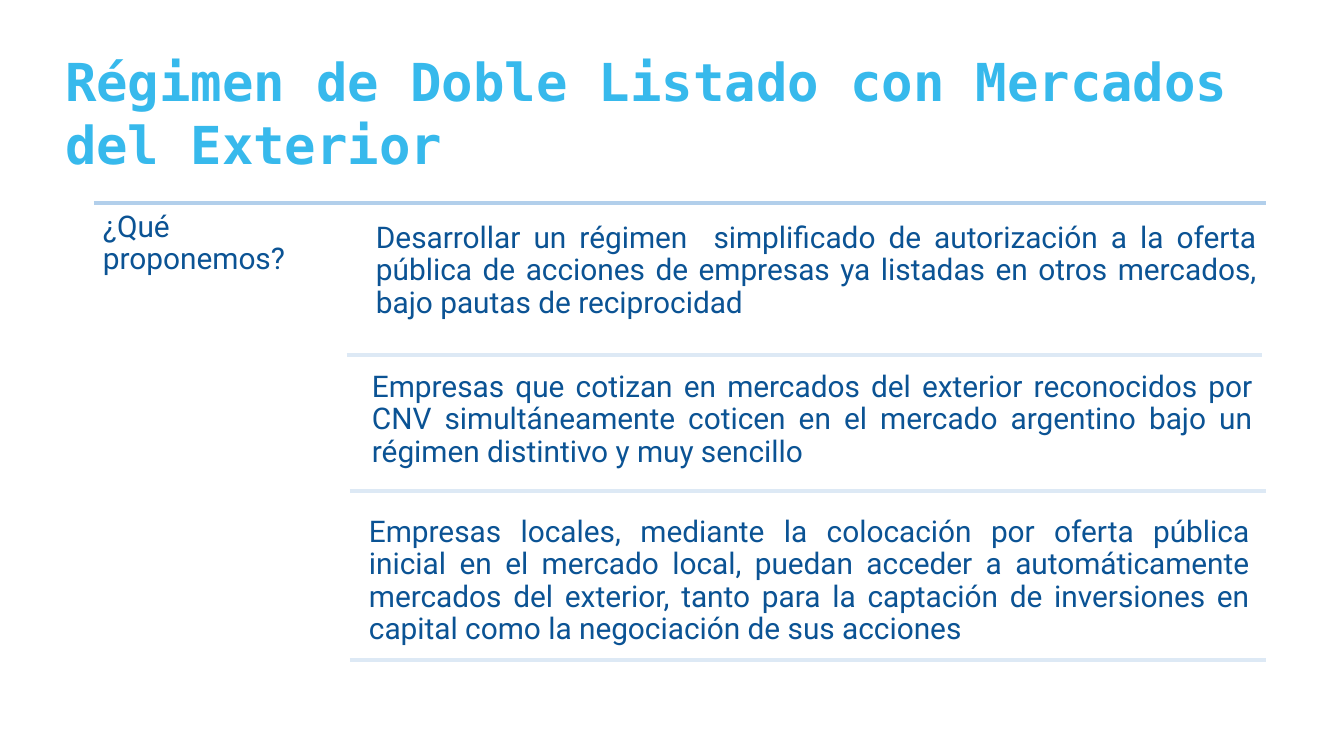
from dataclasses import dataclass

from lxml.etree import SubElement
from pptx import Presentation
from pptx.dml.color import RGBColor
from pptx.enum.shapes import MSO_CONNECTOR
from pptx.enum.text import MSO_ANCHOR, PP_ALIGN
from pptx.oxml.ns import qn
from pptx.util import Emu, Pt

PX_PER_INCH = 134.4
SLIDE_WIDTH, SLIDE_HEIGHT = 1344, 756


def px(length):
    return Emu(round(length * 914400 / PX_PER_INCH))


@dataclass(frozen=True)
class Theme:
    heading_color: str = "37B9EC"
    body_color: str = "0B5394"
    main_rule: str = "B2CFEB"
    light_rule: str = "DDE9F5"
    heading_font: str = "DejaVu Sans Mono"
    body_font: str = "Roboto"
    heading_size: int = 28
    body_size: int = 16
    rule_width: int = 2


class SlideBuilder:
    def __init__(self, slide, theme):
        self.slide = slide
        self.theme = theme

    def _text(self, box, words, inset, font, size, color):
        frame = self.slide.shapes.add_textbox(*map(px, box)).text_frame
        frame.word_wrap = True
        frame.vertical_anchor = MSO_ANCHOR.TOP
        frame.margin_left = frame.margin_right = px(inset)
        frame.margin_top = frame.margin_bottom = px(inset)
        paragraph = frame.paragraphs[0]
        run = paragraph.add_run()
        run.text = words
        run.font.name = font
        run.font.size = Pt(size)
        run.font.color.rgb = RGBColor.from_string(color)
        return paragraph

    def heading(self, box, words):
        theme = self.theme
        paragraph = self._text(box, words, 13, theme.heading_font,
                               theme.heading_size, theme.heading_color)
        paragraph.runs[0].font.bold = True

    def body(self, box, words, align=PP_ALIGN.LEFT):
        theme = self.theme
        paragraph = self._text(box, words, 9, theme.body_font,
                               theme.body_size, theme.body_color)
        paragraph.alignment = align
        paragraph.line_spacing = 0.9

    def rule(self, left, right, y, color):
        line = self.slide.shapes.add_connector(
            MSO_CONNECTOR.STRAIGHT, px(left), px(y), px(right), px(y))
        line.line.color.rgb = RGBColor.from_string(color)
        line.line.width = Pt(self.theme.rule_width)
        SubElement(line._element.spPr, qn("a:effectLst"))


# left, top, height, text, then the rule below: left, right, y
PROPOSALS = [
    (367, 214, 179,
     "Desarrollar un régimen  simplificado de autorización a la oferta pública "
     "de acciones de empresas ya listadas en otros mercados, bajo pautas de "
     "reciprocidad",
     (347, 1262, 355)),
    (363, 363, 148,
     "Empresas que cotizan en mercados del exterior reconocidos por CNV "
     "simultáneamente coticen en el mercado argentino bajo un régimen "
     "distintivo y muy sencillo",
     (350, 1266, 491)),
    (360, 508, 134,
     "Empresas locales, mediante la colocación por oferta pública inicial en "
     "el mercado local, puedan acceder a automáticamente mercados del "
     "exterior, tanto para la captación de inversiones en capital como la "
     "negociación de sus acciones",
     (350, 1266, 660)),
]
PROPOSAL_WIDTH = 899


def main():
    deck = Presentation()
    deck.slide_width, deck.slide_height = px(SLIDE_WIDTH), px(SLIDE_HEIGHT)
    theme = Theme()
    builder = SlideBuilder(deck.slides.add_slide(deck.slide_layouts[6]), theme)

    builder.heading((52, 36, 1214, 90),
                    "Régimen de Doble Listado con Mercados del Exterior")
    builder.rule(94, 1266, 203, theme.main_rule)
    builder.body((94, 203, 255, 505), "¿Qué proponemos?")
    for left, top, height, proposal, divider in PROPOSALS:
        builder.body((left, top, PROPOSAL_WIDTH, height), proposal,
                     PP_ALIGN.JUSTIFY)
        builder.rule(*divider, theme.light_rule)

    deck.save("out.pptx")


if __name__ == "__main__":
    main()
